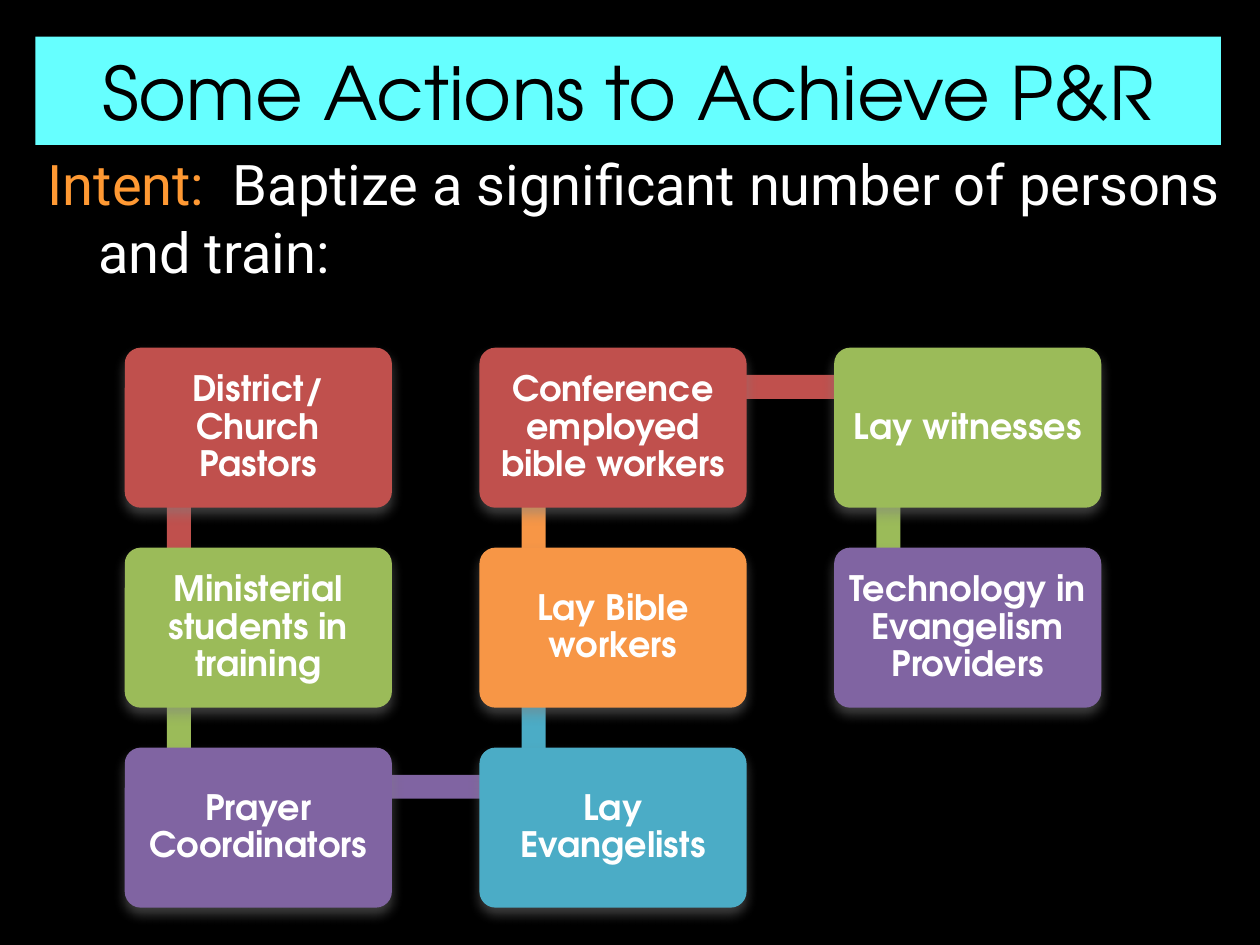
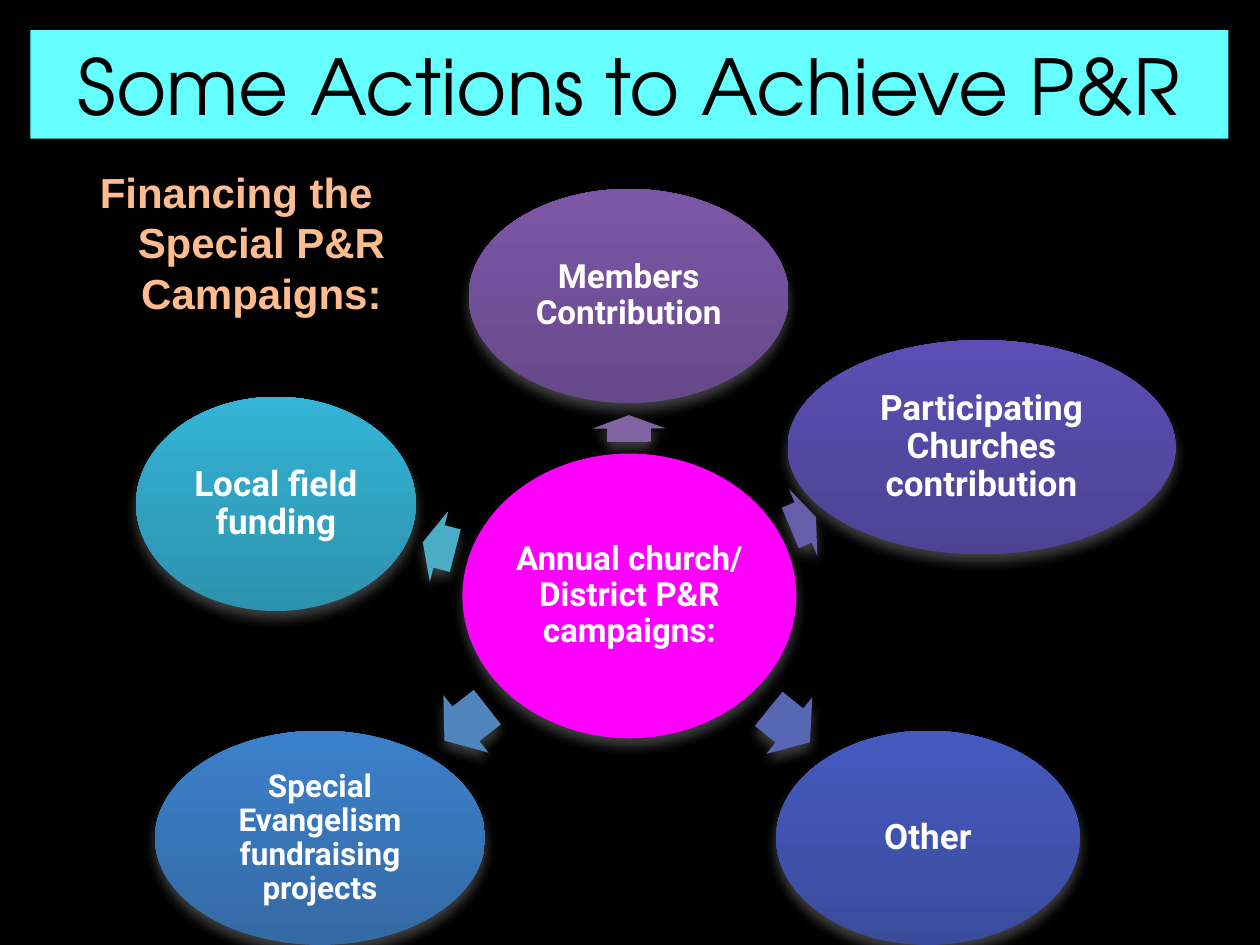
"""Build two slides on actions to achieve P&R: a chain of trainees and a wheel of funding sources."""
import math
from dataclasses import dataclass

import pptx
import pptx.dml.color
import pptx.enum.shapes
import pptx.enum.text
import pptx.oxml
import pptx.oxml.ns
import pptx.util

TITLE = "Some Actions to Achieve P&R"
INTENT = [("Intent:  ", "FF9933"), ("Baptize a significant number of persons and train:", "FFFFFF")]
FINANCING = [("Financing the Special P&R Campaigns:", "FFBC8F")]

RED, GREEN, PURPLE, TEAL, ORANGE = "C0504D", "9BBB59", "8064A2", "4BACC6", "F79646"
TRAINEES = [
    ("District/ Church Pastors", 0, 0, RED),
    ("Ministerial students in training", 0, 1, GREEN),
    ("Prayer Coordinators", 0, 2, PURPLE),
    ("Lay Evangelists", 1, 2, TEAL),
    ("Lay Bible workers", 1, 1, ORANGE),
    ("Conference employed bible workers", 1, 0, RED),
    ("Lay witnesses", 2, 0, GREEN),
    ("Technology in Evangelism Providers", 2, 1, PURPLE),
]

HUB = ("Annual church/ District P&R campaigns:", 49.95, 47.3, 26.5, 22.6)
SOURCES = [
    ("Members Contribution", 49.9, 23.5, 25.4, 19, "8064A2", ("664989", "7C57A8")),
    ("Participating Churches contribution", 77.9, 35.5, 30.8, 20, "685DAB", ("4D4293", "5C4EB4")),
    ("Other", 73.65, 66.5, 24.1, 20, "5767B4", ("3B4B9C", "455ABF")),
    ("Special Evangelism fundraising projects", 25.4, 66.5, 26.2, 18, "5185BD", ("346AA5", "3C80CB")),
    ("Local field funding", 21.9, 40, 22.2, 20, "4BACC6", ("2D92AD", "34B4D6")),
]

COLUMNS = 100
CARD_LEFT, CARD_TOP, CARD_W, CARD_H = 9.9, 27.6, 21.2, 12.7
CARD_PITCH_X, CARD_PITCH_Y = 28.15, 15.87
LINK_X, LINK_Y, LINK_THICKNESS = 4.3, 3.1, 1.9
SOURCE_H, ARROW_W, ARROW_SHARE = 17, 5.8, 0.53


@dataclass(frozen=True)
class Theme:
    """Colours, fonts and type sizes."""
    background: str = "000000"
    band: str = "66FFFF"
    title: str = "000000"
    text: str = "FFFFFF"
    hub: str = "FF00FF"
    shadow: str = "808080"
    display_font: str = "TeX Gyre Adventor"
    body_font: str = "Roboto"
    label_font: str = "Arial"
    intent_size: int = 32
    label_size: int = 24
    card_size: int = 20
    hub_size: int = 19


THEME = Theme()
SHAPE = pptx.enum.shapes.MSO_SHAPE
CENTER = pptx.enum.text.PP_ALIGN.CENTER
MIDDLE = pptx.enum.text.MSO_ANCHOR.MIDDLE

prs = pptx.Presentation()
prs.slide_width, prs.slide_height = pptx.util.Inches(10), pptx.util.Inches(7.5)


def rgb(value):
    """Turn a hex string into a colour."""
    return pptx.dml.color.RGBColor.from_string(value)


def grid(*values):
    """Turn grid columns into slide lengths."""
    return [round(v * prs.slide_width / COLUMNS) for v in values]


def add_shadow(sp):
    """Give a shape the soft shadow that falls below it."""
    effects = sp.element.spPr.find(pptx.oxml.ns.qn("a:effectLst"))
    effects.append(pptx.oxml.parse_xml(
        f'<a:outerShdw {pptx.oxml.ns.nsdecls("a")} blurRad="{pptx.util.Pt(7)}" '
        f'dist="{pptx.util.Pt(4)}" dir="5400000" rotWithShape="0">'
        f'<a:srgbClr val="{THEME.shadow}"><a:alpha val="50000"/></a:srgbClr></a:outerShdw>'))


def add_block(slide, kind, box, fill, shadow=True, rotation=0, adjust=()):
    """Add a preset shape with a plain fill, or a gradient from bottom to top."""
    sp = slide.shapes.add_shape(kind, *grid(*box))
    sp.shadow.inherit = False
    sp.line.fill.background()
    sp.rotation = rotation
    for i, value in enumerate(adjust):
        sp.adjustments[i] = value
    if isinstance(fill, tuple):
        sp.fill.gradient()
        sp.fill.gradient_angle = 90
        for stop, color in zip(sp.fill.gradient_stops, fill):
            stop.color.rgb = rgb(color)
    else:
        sp.fill.solid()
        sp.fill.fore_color.rgb = rgb(fill)
    if shadow:
        add_shadow(sp)
    return sp


def format_run(r, font, size, color, bold=False):
    """Set the type of one run."""
    r.font.name, r.font.size, r.font.bold = font, pptx.util.Pt(size), bold
    r.font.color.rgb = rgb(color)


def set_label(sp, text, font, size, inset, color=THEME.text, bold=True, spacing=0.9):
    """Write centred text into a shape."""
    tf = sp.text_frame
    tf.text = text
    tf.word_wrap, tf.vertical_anchor = True, MIDDLE
    tf.margin_left = tf.margin_right = tf.margin_top = tf.margin_bottom = pptx.util.Inches(inset)
    p = tf.paragraphs[0]
    p.alignment, p.line_spacing = CENTER, spacing
    format_run(p.runs[0], font, size, color, bold)


def add_hanging_text(slide, box, parts, font, size, bold=False, align=None):
    """Add a text box whose first line hangs to the left."""
    tf = slide.shapes.add_textbox(*grid(*box)).text_frame
    tf.word_wrap = True
    p = tf.paragraphs[0]
    p.alignment = align
    indent = pptx.util.Inches(0.4)
    pPr = p._p.get_or_add_pPr()
    pPr.set("marL", str(indent))
    pPr.set("indent", str(-indent))
    for text, color in parts:
        r = p.add_run()
        r.text = text
        format_run(r, font, size, color, bold)


def add_titled_slide(band, size):
    """Add a dark slide with the title band."""
    slide = prs.slides.add_slide(prs.slide_layouts[6])
    slide.background.fill.solid()
    slide.background.fill.fore_color.rgb = rgb(THEME.background)
    sp = add_block(slide, SHAPE.RECTANGLE, band, THEME.band, shadow=False)
    set_label(sp, TITLE, THEME.display_font, size, 0.05, THEME.title, bold=False, spacing=1)
    return slide


def card_corner(col, row):
    """Give the top left corner of a card."""
    return CARD_LEFT + col * CARD_PITCH_X, CARD_TOP + row * CARD_PITCH_Y


def add_link(slide, start, end, color):
    """Add the bar that joins two cards."""
    (x1, y1), (x2, y2) = card_corner(*start), card_corner(*end)
    length = math.hypot(x2 - x1, y2 - y1)
    x, y = (x1 + x2) / 2 + LINK_X, (y1 + y2) / 2 + LINK_Y
    box = (x - length / 2, y - LINK_THICKNESS / 2, length, LINK_THICKNESS)
    angle = math.degrees(math.atan2(y2 - y1, x2 - x1)) % 360
    add_block(slide, SHAPE.RECTANGLE, box, color, shadow=False, rotation=angle)


def add_chain(slide):
    """Draw the cards in order, each over the bar to the next one."""
    for i, (text, col, row, color) in enumerate(TRAINEES):
        if i + 1 < len(TRAINEES):
            following = TRAINEES[i + 1]
            bar = ORANGE if color == ORANGE else color
            add_link(slide, (col, row), following[1:3], bar)
        box = (*card_corner(col, row), CARD_W, CARD_H)
        sp = add_block(slide, SHAPE.ROUNDED_RECTANGLE, box, color, adjust=(0.1,))
        set_label(sp, text, THEME.display_font, THEME.card_size, 0.08)


def add_bubble(slide, text, x, y, w, h, fill, size):
    """Add a labelled ellipse around a centre."""
    sp = add_block(slide, SHAPE.OVAL, (x - w / 2, y - h / 2, w, h), fill)
    set_label(sp, text, THEME.body_font, size, 0.03)


def ellipse_radius(w, h, angle):
    """Give the distance from an ellipse's centre to its edge."""
    return 1 / math.hypot(2 * math.cos(angle) / w, 2 * math.sin(angle) / h)


def add_wheel(slide):
    """Draw the hub, and each source with an arrow in the gap before it."""
    text, hub_x, hub_y, hub_w, hub_h = HUB
    add_bubble(slide, *HUB, THEME.hub, THEME.hub_size)
    for text, x, y, w, size, arrow_color, fill in SOURCES:
        angle = math.atan2(y - hub_y, x - hub_x)
        near = ellipse_radius(hub_w, hub_h, angle)
        far = math.hypot(x - hub_x, y - hub_y) - ellipse_radius(w, SOURCE_H, angle)
        length, middle = ARROW_SHARE * (far - near), (near + far) / 2
        arrow_x, arrow_y = hub_x + middle * math.cos(angle), hub_y + middle * math.sin(angle)
        box = (arrow_x - length / 2, arrow_y - ARROW_W / 2, length, ARROW_W)
        add_block(slide, SHAPE.RIGHT_ARROW, box, arrow_color,
                  rotation=math.degrees(angle) % 360, adjust=(0.6, 0.5))
        add_bubble(slide, text, x, y, w, SOURCE_H, fill, size)


def main():
    """Build and save both slides."""
    slide = add_titled_slide((2.8, 2.9, 94.1, 8.6), 42)
    add_chain(slide)
    add_hanging_text(slide, (2.8, 11.4, 97.2, 11.8), INTENT, THEME.body_font, THEME.intent_size)

    slide = add_titled_slide((2.4, 2.4, 95.1, 8.6), 44)
    add_wheel(slide)
    add_hanging_text(slide, (2.4, 12.7, 32.7, 13.1), FINANCING, THEME.label_font,
                     THEME.label_size, bold=True, align=CENTER)
    prs.save("out.pptx")


if __name__ == "__main__":
    main()
